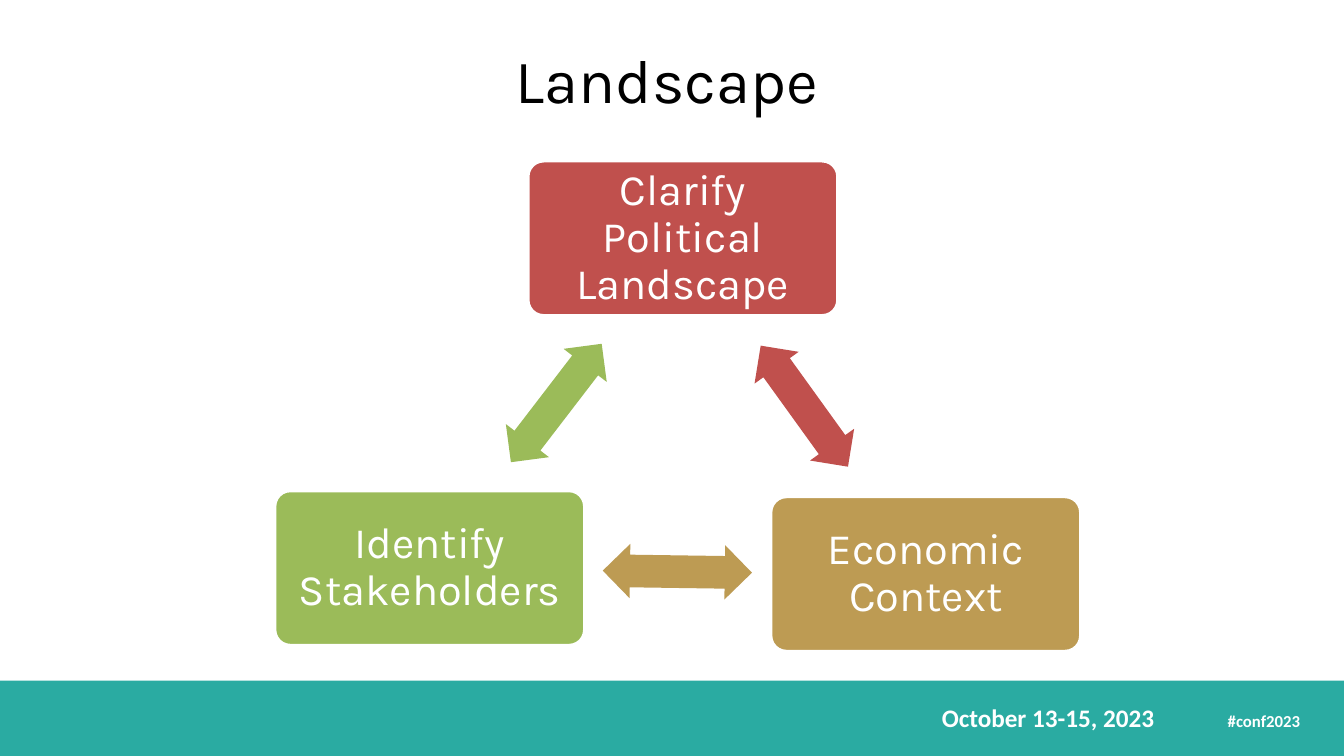
from pptx import Presentation
from pptx import util as u
from pptx.dml import color
from pptx.enum import shapes, text

WHITE = "FFFFFF"
TEAL = "2AABA2"
RED = "C0504D"
GOLD = "BD9B53"
GREEN = "9BBB59"

THEMES = [
    ("Clarify Political Landscape", RED, (13.31, 4.06), (18.39, 9.55), 54.2),
    ("Economic Context", GOLD, (19.43, 12.52), (15.19, 13.72), 180.8),
    ("Identify Stakeholders", GREEN, (6.93, 12.37), (12.14, 9.47), 307.5),
]


def rgb(value):
    return color.RGBColor.from_string(value)


def add_filled(s, kind, box, fill):
    sp = s.shapes.add_shape(kind, *map(u.Cm, box))
    sp.shadow.inherit = False
    sp.fill.solid()
    sp.fill.fore_color.rgb = rgb(fill)
    sp.line.fill.background()
    return sp


def write(sp, words, size, font="Karla", ink=WHITE, bold=False,
          align=text.PP_ALIGN.CENTER):
    tf = sp.text_frame
    tf.word_wrap = True
    tf.vertical_anchor = text.MSO_ANCHOR.MIDDLE
    p = tf.paragraphs[0]
    p.text = words
    p.alignment = align
    p.font.name = font
    p.font.size = u.Pt(size)
    p.font.bold = bold
    p.font.color.rgb = rgb(ink)
    return tf


def add_text(s, box, words, size, **style):
    return write(s.shapes.add_textbox(*map(u.Cm, box)), words, size, **style)


def add_theme(s, words, fill, corner):
    sp = add_filled(s, shapes.MSO_SHAPE.ROUNDED_RECTANGLE,
                    (*corner, 7.8, 3.89), fill)
    sp.adjustments[0] = 0.1
    sp.line.color.rgb = rgb(WHITE)
    sp.line.width = u.Pt(2)
    tf = write(sp, words, 31)
    tf.margin_left = tf.margin_right = u.Cm(0.33)
    tf.margin_top = tf.margin_bottom = u.Cm(0.33)
    tf.paragraphs[0].line_spacing = 0.9


def add_arrow(s, fill, corner, angle):
    sp = add_filled(s, shapes.MSO_SHAPE.LEFT_RIGHT_ARROW,
                    (*corner, 3.76, 1.37), fill)
    sp.adjustments[0] = 0.6
    sp.adjustments[1] = 0.5
    sp.rotation = angle


def add_footer(s):
    add_filled(s, shapes.MSO_SHAPE.RECTANGLE, (0, 17.15, 33.87, 1.9), TEAL)
    style = dict(font="Calibri", bold=True, align=text.PP_ALIGN.RIGHT)
    add_text(s, (21.16, 17.58, 8.18, 1.02), "October 13-15, 2023", 18, **style)
    add_text(s, (29.8, 17.65, 3.22, 1.02), "#conf2023", 12, **style)


def main():
    prs = Presentation()
    prs.slide_width = u.Cm(33.87)
    prs.slide_height = u.Cm(19.05)
    s = prs.slides.add_slide(prs.slide_layouts[6])
    add_footer(s)
    add_text(s, (1.57, 0.41, 30.48, 3.18), "Landscape", 44, ink="000000")
    for words, fill, box_corner, arrow_corner, angle in THEMES:
        add_theme(s, words, fill, box_corner)
        add_arrow(s, fill, arrow_corner, angle)
    prs.save("out.pptx")


if __name__ == "__main__":
    main()
